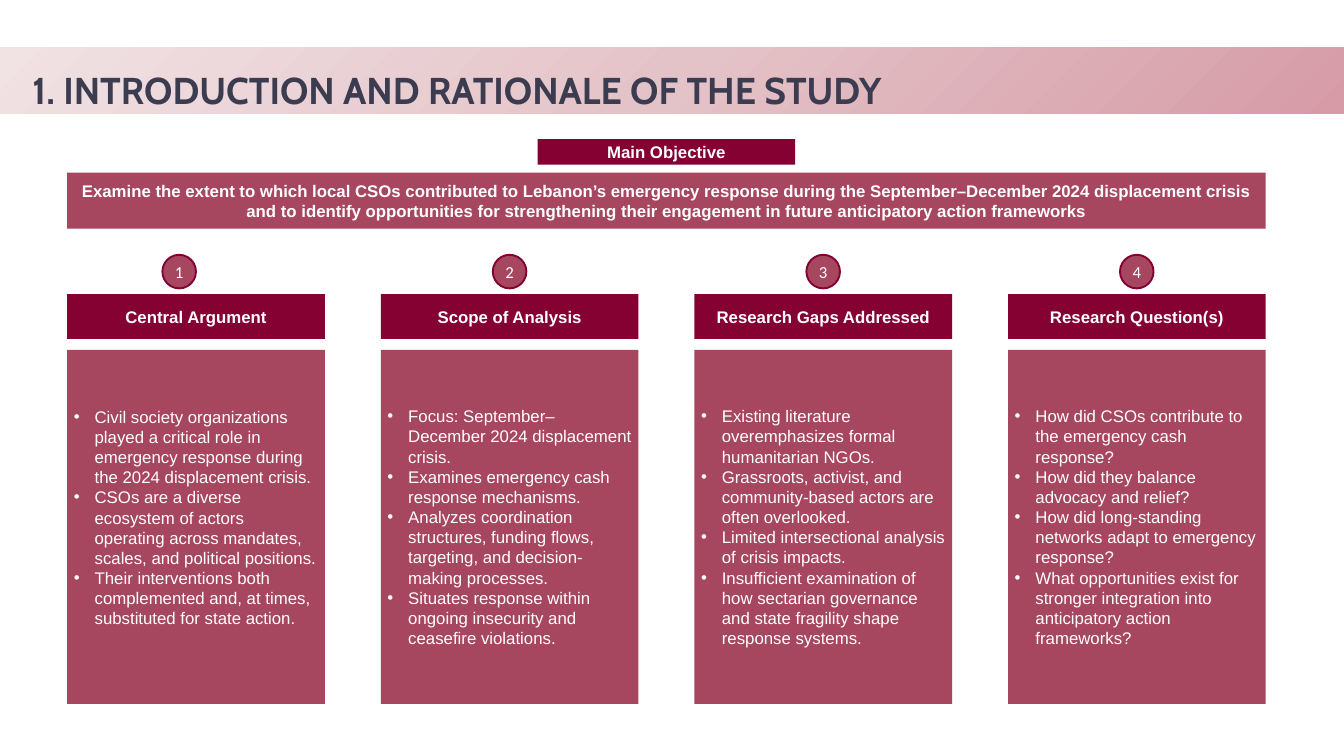
from lxml import etree
from pptx import Presentation
from pptx import util as u
from pptx.dml.color import RGBColor
from pptx.enum import shapes, text
from pptx.oxml import parse_xml
from pptx.oxml.ns import nsdecls, qn

COLORS = {"dark": "840132", "rose": "A7465F", "ring": "830032", "white": "FFFFFF",
          "title": "3C3C50", "band": ("D69BA6", "E4C3C8", "F1E2E4")}
CELL = 1 / 6
LEFT, COL_W, PITCH = 6, 23, 28
LINE_H = u.Pt(20.7)

COLUMNS = [
    ("Central Argument", 8.5, LINE_H, [
        "Civil society organizations played a critical role in emergency response during the 2024 displacement crisis.",
        "CSOs are a diverse ecosystem of actors operating across mandates, scales, and political positions.",
        "Their interventions both complemented and, at times, substituted for state action."]),
    ("Scope of Analysis", 10, 0, [
        "Focus: September–December 2024 displacement crisis.",
        "Examines emergency cash response mechanisms.",
        "Analyzes coordination structures, funding flows, targeting, and decision-making processes.",
        "Situates response within ongoing insecurity and ceasefire violations."]),
    ("Research Gaps Addressed", 10, 0, [
        "Existing literature overemphasizes formal humanitarian NGOs.",
        "Grassroots, activist, and community-based actors are often overlooked.",
        "Limited intersectional analysis of crisis impacts.",
        "Insufficient examination of how sectarian governance and state fragility shape response systems."]),
    ("Research Question(s)", 10, 0, [
        "How did CSOs contribute to the emergency cash response?",
        "How did they balance advocacy and relief?",
        "How did long-standing networks adapt to emergency response?",
        "What opportunities exist for stronger integration into anticipatory action frameworks?"]),
]


def grid(*cells):
    """Convert grid columns and rows to lengths."""
    return [u.Inches(c * CELL) for c in cells]


def style(p, size, font, color, bold=False):
    """Format every run of a paragraph."""
    for r in p.runs:
        r.font.size, r.font.name, r.font.bold = u.Pt(size), font, bold
        r.font.color.rgb = RGBColor.from_string(COLORS[color])


def add_block(s, box, fill, lines, font="Arial", bold=False, kind="ROUNDED_RECTANGLE"):
    """Add a filled shape with centred white text."""
    sp = s.shapes.add_shape(shapes.MSO_SHAPE[kind], *grid(*box))
    sp.shadow.inherit = False
    if kind == "ROUNDED_RECTANGLE":
        sp.adjustments[0] = 0
    sp.fill.solid()
    sp.fill.fore_color.rgb = RGBColor.from_string(COLORS[fill])
    sp.line.fill.background()
    tf = sp.text_frame
    tf.word_wrap = True
    tf.vertical_anchor = text.MSO_ANCHOR.MIDDLE
    tf.text = "\n".join(lines)
    for p in tf.paragraphs:
        p.alignment = text.PP_ALIGN.CENTER
        style(p, 18, font, "white", bold)
    return sp


def add_header(s, x, y, w, h):
    """Add the gradient band and the slide title."""
    sp = s.shapes.add_shape(shapes.MSO_SHAPE.RECTANGLE, *grid(x, y, w, h))
    sp.shadow.inherit = False
    sp.rotation = 180
    sp.line.fill.background()
    stops = "".join(f'<a:gs pos="{i * 50000}"><a:srgbClr val="{c}"/></a:gs>'
                    for i, c in enumerate(COLORS["band"]))
    sp._element.spPr.find(qn("a:prstGeom")).addnext(parse_xml(
        f'<a:gradFill {nsdecls("a")} rotWithShape="1"><a:gsLst>{stops}</a:gsLst>'
        '<a:path path="circle"><a:fillToRect l="100000" t="100000"/></a:path></a:gradFill>'))
    tf = s.shapes.add_textbox(*grid(x + 2.9, y + 0.2, w - 6.9, h - 0.74)).text_frame
    tf.word_wrap = True
    tf.auto_size = text.MSO_AUTO_SIZE.SHAPE_TO_FIT_TEXT
    tf.margin_left = tf.margin_right = tf.margin_top = tf.margin_bottom = 0
    tf.text = "1. INTRODUCTION AND RATIONALE OF THE STUDY"
    p = tf.paragraphs[0]
    p.line_spacing = u.Pt(67.2)
    style(p, 40, "Cabin", "title", True)


def add_objective(s, x, y, w):
    """Add the main objective label and statement."""
    add_block(s, (x, y + 3, w, 5), "rose", [
        "Examine the extent to which local CSOs contributed to Lebanon’s emergency response during the "
        "September–December 2024 displacement crisis and to identify opportunities for strengthening "
        "their engagement in future anticipatory action frameworks"], bold=True)
    add_block(s, (x + (w - COL_W) / 2, y, COL_W, 2.28), "dark", ["Main Objective"], bold=True)


def add_column(s, x, y, w, number, heading, badge_x, space_below, points):
    """Add a numbered badge, its heading and its bullet panel."""
    add_block(s, (x, y + 3.5, w, 4), "dark", [heading], bold=True)
    panel = add_block(s, (x, y + 8.5, w, 31.6), "rose", points)
    panel.text_frame.margin_bottom += space_below
    for p in panel.text_frame.paragraphs:
        p.alignment = text.PP_ALIGN.LEFT
        pPr = p._p.get_or_add_pPr()
        pPr.set("marL", str(u.Inches(0.31)))
        pPr.set("indent", str(-u.Inches(0.31)))
        etree.SubElement(pPr, qn("a:buFont")).set("typeface", "Arial")
        etree.SubElement(pPr, qn("a:buChar")).set("char", "•")
    badge = add_block(s, (x + badge_x, y, 3, 3), "rose", [str(number)], "Calibri", kind="OVAL")
    badge.line.color.rgb = RGBColor.from_string(COLORS["ring"])
    badge.line.width = u.Pt(2)


def main():
    """Build and save the slide."""
    prs = Presentation()
    prs.slide_width, prs.slide_height = grid(120, 67.5)
    s = prs.slides.add_slide(prs.slide_layouts[6])
    add_header(s, 0, 4.2, 120, 5.9)
    add_objective(s, LEFT, 12.42, 3 * PITCH + COL_W)
    for i, column in enumerate(COLUMNS):
        add_column(s, LEFT + i * PITCH, 22.75, COL_W, i + 1, *column)
    prs.save("out.pptx")


if __name__ == "__main__":
    main()
